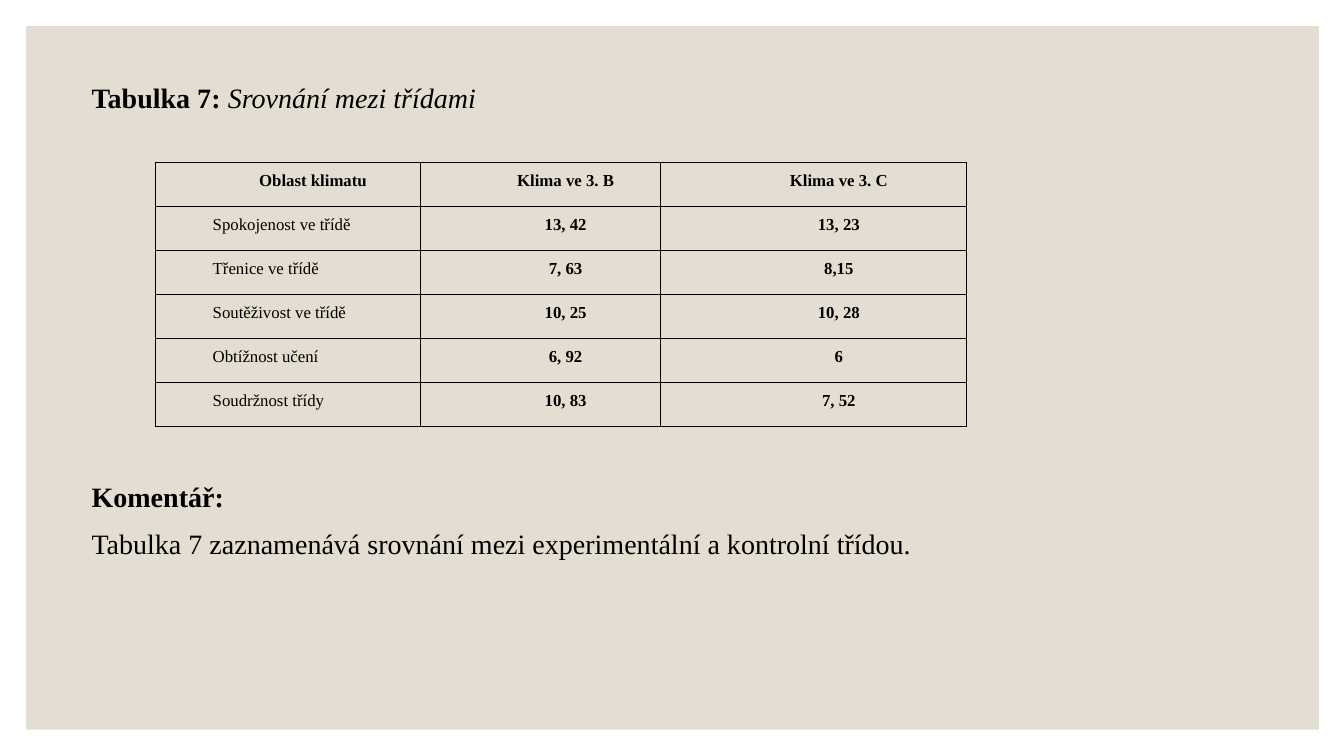
from lxml import etree
from pptx import Presentation
from pptx.dml.color import RGBColor
from pptx.enum import shapes, text
from pptx.oxml import ns
from pptx.util import Inches, Pt

FONT = "Times New Roman"
COLORS = {"panel": "E3DED1", "ink": "000000"}


def add_run(para, words, size, bold=False, italic=False):
    run = para.add_run()
    run.text = words
    font = run.font
    font.name, font.size = FONT, Pt(size)
    font.bold, font.italic = bold, italic
    font.color.rgb = RGBColor.from_string(COLORS["ink"])


def add_borders(cell):
    props = cell._tc.get_or_add_tcPr()
    for at, side in enumerate(("lnL", "lnR", "lnT", "lnB")):
        line = etree.Element(ns.qn("a:" + side), w=str(Pt(1)))
        fill = etree.SubElement(line, ns.qn("a:solidFill"))
        etree.SubElement(fill, ns.qn("a:srgbClr"), val=COLORS["ink"])
        props.insert(at, line)


prs = Presentation()
prs.slide_width, prs.slide_height = Inches(13.33), Inches(7.5)
slide = prs.slides.add_slide(prs.slide_layouts[6])

# Background panel
panel = slide.shapes.add_shape(
    shapes.MSO_SHAPE.RECTANGLE,
    Inches(0.26), Inches(0.26), Inches(12.82), Inches(6.98))
panel.shadow.inherit = False
panel.fill.solid()
panel.fill.fore_color.rgb = RGBColor.from_string(COLORS["panel"])
panel.line.fill.background()

# Caption and comment: top, height, paragraphs of (words, bold, italic)
blocks = [
    (0.75, 0.45, [[("Tabulka 7: ", True, False),
                   ("Srovnání mezi třídami", False, True)]]),
    (4.71, 1.0, [[("Komentář:", True, False)],
                 [("Tabulka 7 zaznamenává srovnání mezi experimentální "
                   "a kontrolní třídou.", False, False)]]),
]
for top, height, paras in blocks:
    box = slide.shapes.add_textbox(
        Inches(0.81), Inches(top), Inches(11.5), Inches(height))
    frame = box.text_frame
    frame.word_wrap = True
    for i, runs in enumerate(paras):
        para = frame.add_paragraph() if i else frame.paragraphs[0]
        if i:
            para.space_before = Pt(9.5)
        for words, bold, italic in runs:
            add_run(para, words, 20, bold, italic)

# Comparison table
rows = [
    ("Oblast klimatu", "Klima ve 3. B", "Klima ve 3. C"),
    ("Spokojenost ve třídě", "13, 42", "13, 23"),
    ("Třenice ve třídě", "7, 63", "8,15"),
    ("Soutěživost ve třídě", "10, 25", "10, 28"),
    ("Obtížnost učení", "6, 92", "6"),
    ("Soudržnost třídy", "10, 83", "7, 52"),
]
widths = (2.63, 2.38, 3.04)
table = slide.shapes.add_table(
    len(rows), len(widths),
    Inches(1.54), Inches(1.61), Inches(sum(widths)), Inches(2.62)).table
table.first_row = table.horz_banding = False
for col, width in zip(table.columns, widths):
    col.width = Inches(width)

for r, row in enumerate(rows):
    for c, words in enumerate(row):
        cell = table.cell(r, c)
        cell.fill.background()
        add_borders(cell)
        cell.margin_left = cell.margin_right = Inches(0.07)
        cell.margin_top = cell.margin_bottom = 0
        label = r > 0 and c == 0
        para = cell.text_frame.paragraphs[0]
        para.alignment = (text.PP_ALIGN.JUSTIFY if label
                          else text.PP_ALIGN.CENTER)
        para.line_spacing = 1.5
        if c == 2:
            para.space_after = Pt(6)
        para._p.get_or_add_pPr().set("marL", str(Inches(0.5)))
        add_run(para, words, 12, bold=not label)

prs.save("out.pptx")
